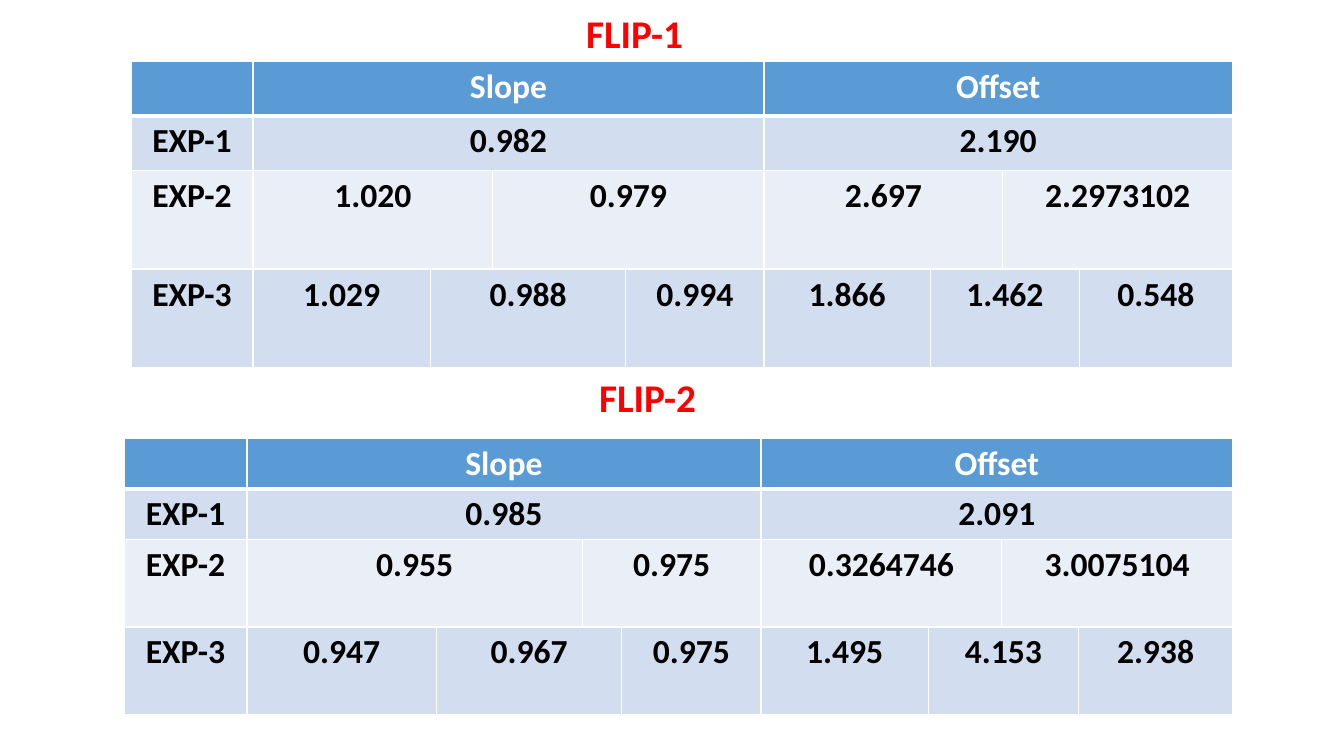
"""Build a slide with two tables of slopes and offsets, FLIP-1 and FLIP-2."""
from dataclasses import dataclass

from lxml import etree
from pptx import Presentation
from pptx.dml.color import RGBColor
from pptx.enum.text import MSO_ANCHOR, MSO_AUTO_SIZE, PP_ALIGN
from pptx.oxml.ns import qn
from pptx.util import Pt

CENTER = PP_ALIGN.CENTER
TOP = MSO_ANCHOR.TOP
GROW = MSO_AUTO_SIZE.SHAPE_TO_FIT_TEXT

WHITE = RGBColor(0xFF, 0xFF, 0xFF)
BLACK = RGBColor(0x00, 0x00, 0x00)
RED = RGBColor(0xFF, 0x00, 0x00)
HEADER_BLUE = RGBColor(0x5B, 0x9B, 0xD5)
BAND_DARK = RGBColor(0xD2, 0xDE, 0xEF)
BAND_LIGHT = RGBColor(0xEA, 0xEF, 0xF7)

ROW_FILLS = (HEADER_BLUE, BAND_DARK, BAND_LIGHT, BAND_DARK)
ROW_SPANS = ((1, 4, 4), (1, 4, 4), (1, 2, 2, 2, 2), (1, 1, 2, 1, 1, 2, 1))
THIN, THICK = 1, 3
HEADING_WIDTH, HEADING_HEIGHT = 138.96, 41.04


@dataclass(frozen=True)
class Flip:
    """One heading with its table; lengths are in points."""
    name: str
    heading_left: float
    heading_top: float
    left: float
    top: float
    columns: tuple[float, ...]
    rows: tuple[float, ...]
    values: tuple[tuple[str, ...], ...]


FLIPS = (
    Flip("FLIP-1", 383.76, 2.88, 93.6, 43.92,
         (87.12, 126.72, 44.64, 95.04, 98.64, 118.8, 51.84, 54.72, 109.44),
         (38.88, 38.88, 70.56, 70.56),
         (("0.982", "2.190"),
          ("1.020", "0.979", "2.697", "2.2973102"),
          ("1.029", "0.988", "0.994", "1.866", "1.462", "0.548"))),
    Flip("FLIP-2", 393.12, 262.8, 88.56, 313.2,
         (87.84, 135.36, 104.4, 28.08, 99.36, 119.52, 52.56, 54.72, 110.16),
         (34.56, 34.56, 62.64, 62.64),
         (("0.985", "2.091"),
          ("0.955", "0.975", "0.3264746", "3.0075104"),
          ("0.947", "0.967", "0.975", "1.495", "4.153", "2.938"))),
)


def write_text(frame, text: str, size: float, color: RGBColor) -> None:
    """Put one centred bold line in a text frame."""
    para = frame.paragraphs[0]
    para.alignment = CENTER
    span = para.add_run()
    span.text = text
    formats = {"name": "Calibri", "size": Pt(size), "bold": True}
    for name, value in formats.items():
        setattr(span.font, name, value)
    span.font.color.rgb = color


def draw_heading(box, flip: Flip) -> None:
    """Place and format the red heading above a table."""
    places = {"left": Pt(flip.heading_left), "top": Pt(flip.heading_top),
              "width": Pt(HEADING_WIDTH), "height": Pt(HEADING_HEIGHT)}
    for name, value in places.items():
        setattr(box, name, value)
    formats = {"word_wrap": True, "auto_size": GROW, "vertical_anchor": TOP}
    for name, value in formats.items():
        setattr(box.text_frame, name, value)
    write_text(box.text_frame, flip.name, 28, RED)


def style_cell(cell, row: int) -> None:
    """Give a cell its white borders and the fill of its row."""
    properties = cell._tc.get_or_add_tcPr()
    widths = {"a:lnL": THIN, "a:lnR": THIN,
              "a:lnT": THICK if row == 1 else THIN,
              "a:lnB": THICK if row == 0 else THIN}
    for tag, width in widths.items():
        line = etree.SubElement(properties, qn(tag), w=str(Pt(width)))
        fill = etree.SubElement(line, qn("a:solidFill"))
        etree.SubElement(fill, qn("a:srgbClr"), val=str(WHITE))
    cell.fill.solid()
    cell.fill.fore_color.rgb = ROW_FILLS[row]


def draw_table(page, flip: Flip) -> None:
    """Add the table, merging cells by the spans of each row."""
    table = page.shapes.add_table(
        len(flip.rows), len(flip.columns), Pt(flip.left), Pt(flip.top),
        Pt(sum(flip.columns)), Pt(sum(flip.rows))).table
    for column, width in zip(table.columns, flip.columns):
        column.width = Pt(width)
    for row, height in zip(table.rows, flip.rows):
        row.height = Pt(height)
    lines = [("", "Slope", "Offset")]
    lines += [(f"EXP-{number}", *values)
              for number, values in enumerate(flip.values, 1)]
    for row, (texts, spans) in enumerate(zip(lines, ROW_SPANS)):
        for column in range(len(flip.columns)):
            style_cell(table.cell(row, column), row)
        start = 0
        for text, count in zip(texts, spans):
            cell = table.cell(row, start)
            if count > 1:
                cell.merge(table.cell(row, start + count - 1))
            write_text(cell.text_frame, text, 24, WHITE if row == 0 else BLACK)
            start += count


def main() -> None:
    """Build and save the deck."""
    deck = Presentation()
    deck.slide_width, deck.slide_height = Pt(960), Pt(540)
    page = deck.slides.add_slide(deck.slide_layouts[5])
    for flip in FLIPS:
        draw_table(page, flip)
    second_heading = page.shapes.add_textbox(0, 0, 0, 0)
    for box, flip in zip((page.shapes.title, second_heading), FLIPS):
        draw_heading(box, flip)
    deck.save("out.pptx")


if __name__ == "__main__":
    main()
